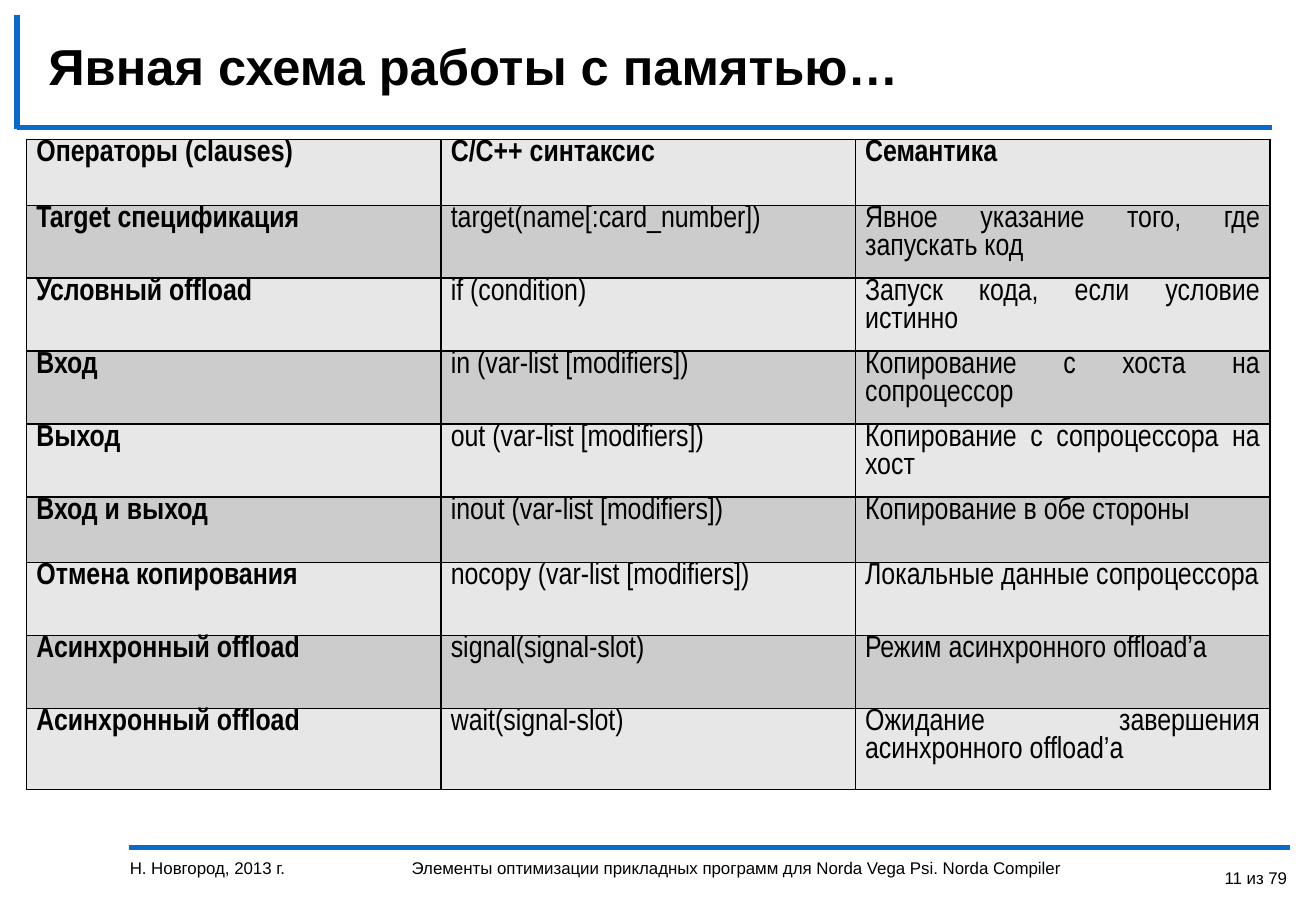
from dataclasses import dataclass

from lxml import etree
from pptx import Presentation
from pptx.dml.color import RGBColor
from pptx.enum.shapes import MSO_CONNECTOR
from pptx.enum.text import MSO_ANCHOR, PP_ALIGN
from pptx.oxml.ns import qn
from pptx.util import Emu, Pt

STRAIGHT = MSO_CONNECTOR.STRAIGHT
TOP, MIDDLE = MSO_ANCHOR.TOP, MSO_ANCHOR.MIDDLE
LEFT, RIGHT, JUSTIFY = PP_ALIGN.LEFT, PP_ALIGN.RIGHT, PP_ALIGN.JUSTIFY
EMU_PER_PX = 9144


@dataclass(frozen=True)
class Theme:
    text: str = "000000"
    accent: str = "0969CD"
    border: str = "000000"
    bands: tuple = ("E7E7E7", "CCCCCC")
    font: str = "Arial"
    table_font: str = "Arial Narrow"
    title_size: int = 30
    table_size: int = 18
    footer_size: int = 10
    rule_width: int = 3
    border_width: int = 1


THEME = Theme()

TITLE = "Явная схема работы с памятью…"
CLAUSES = [
    ("Операторы (clauses)", "C/C++ синтаксис", "Семантика"),
    ("Target спецификация", "target(name[:card_number])", "Явное указание того, где запускать код"),
    ("Условный offload", "if (condition)", "Запуск кода, если условие истинно"),
    ("Вход", "in (var-list [modifiers])", "Копирование с хоста на сопроцессор"),
    ("Выход", "out (var-list [modifiers])", "Копирование с сопроцессора на хост"),
    ("Вход и выход", "inout (var-list [modifiers])", "Копирование в обе стороны"),
    ("Отмена копирования", "nocopy (var-list [modifiers])", "Локальные данные сопроцессора"),
    ("Асинхронный offload", "signal(signal-slot)", "Режим асинхронного offload’а"),
    ("Асинхронный offload", "wait(signal-slot)", "Ожидание завершения асинхронного offload’а"),
]
ROW_HEIGHTS = [54, 60, 60, 60, 60, 54, 60, 60, 67]
PLACE = "Н. Новгород, 2013 г."
COURSE = "Элементы оптимизации прикладных программ для Norda Vega Psi. Norda Compiler"
PAGE = "11 из 79"


def px(length):
    return Emu(length * EMU_PER_PX)


def write_text(frame, text, *, size, font=THEME.font, bold=False, align=LEFT,
               space_after=None, line_spacing=None):
    frame.word_wrap = True
    paragraph = frame.paragraphs[0]
    paragraph.alignment = align
    paragraph.space_after = space_after
    paragraph.line_spacing = line_spacing
    run = paragraph.add_run()
    run.text = text
    run.font.name = font
    run.font.size = Pt(size)
    run.font.bold = bold
    run.font.color.rgb = RGBColor.from_string(THEME.text)


def add_text(slide, box, text, anchor=TOP, **text_format):
    shape = slide.shapes.add_textbox(*map(px, box))
    shape.text_frame.vertical_anchor = anchor
    write_text(shape.text_frame, text, **text_format)


def add_rule(slide, start, end):
    rule = slide.shapes.add_connector(STRAIGHT, *map(px, (*start, *end)))
    rule.line.color.rgb = RGBColor.from_string(THEME.accent)
    rule.line.width = Pt(THEME.rule_width)
    etree.SubElement(rule._element.spPr, qn("a:effectLst"))


def set_borders(cell):
    properties = cell._tc.get_or_add_tcPr()
    for index, side in enumerate(("lnL", "lnR", "lnT", "lnB")):
        border = etree.Element(qn(f"a:{side}"), w=str(Pt(THEME.border_width)))
        fill = etree.SubElement(border, qn("a:solidFill"))
        etree.SubElement(fill, qn("a:srgbClr"), val=THEME.border)
        properties.insert(index, border)


def add_header(slide, box):
    left, top, width, height = box
    bottom = top + height
    add_rule(slide, (left, bottom - 1), (left + width, bottom - 1))
    add_rule(slide, (left, top), (left, bottom))
    add_text(slide, (left + 16, top + 11, width - 40, 61), TITLE, MIDDLE,
             size=THEME.title_size, bold=True)


def add_clause_table(slide, box):
    frame = slide.shapes.add_table(len(CLAUSES), len(CLAUSES[0]), *map(px, box))
    table = frame.table
    table.first_row = table.horz_banding = False
    for column in table.columns:
        column.width = px(box[2] // len(table.columns))
    for row_index, (row, texts) in enumerate(zip(table.rows, CLAUSES)):
        row.height = px(ROW_HEIGHTS[row_index])
        for column_index, (cell, text) in enumerate(zip(row.cells, texts)):
            cell.margin_left = cell.margin_right = px(8)
            cell.margin_top = cell.margin_bottom = 0
            cell.vertical_anchor = TOP
            cell.fill.solid()
            cell.fill.fore_color.rgb = RGBColor.from_string(THEME.bands[row_index % 2])
            set_borders(cell)
            write_text(cell.text_frame, text, size=THEME.table_size, font=THEME.table_font,
                       bold=row_index == 0 or column_index == 0, align=JUSTIFY,
                       space_after=Pt(6))


def add_footer(slide, box):
    left, top, width, height = box
    text_top, text_height = top + 3, height - 3
    add_rule(slide, (left, top), (left + width, top))
    add_text(slide, (left - 9, text_top, 224, text_height), PLACE, size=THEME.footer_size)
    add_text(slide, (left + 223, text_top, 630, text_height), COURSE, size=THEME.footer_size)
    add_text(slide, (left + width - 95, text_top, 102, text_height), PAGE,
             size=THEME.footer_size, align=RIGHT, line_spacing=1.5)


def main():
    presentation = Presentation()
    presentation.slide_width, presentation.slide_height = px(1083), px(750)
    slide = presentation.slides.add_slide(presentation.slide_layouts[6])
    add_header(slide, (14, 12, 1033, 94))
    add_clause_table(slide, (22, 115, 1023, sum(ROW_HEIGHTS)))
    add_footer(slide, (106, 698, 956, 52))
    presentation.save("out.pptx")


if __name__ == "__main__":
    main()
